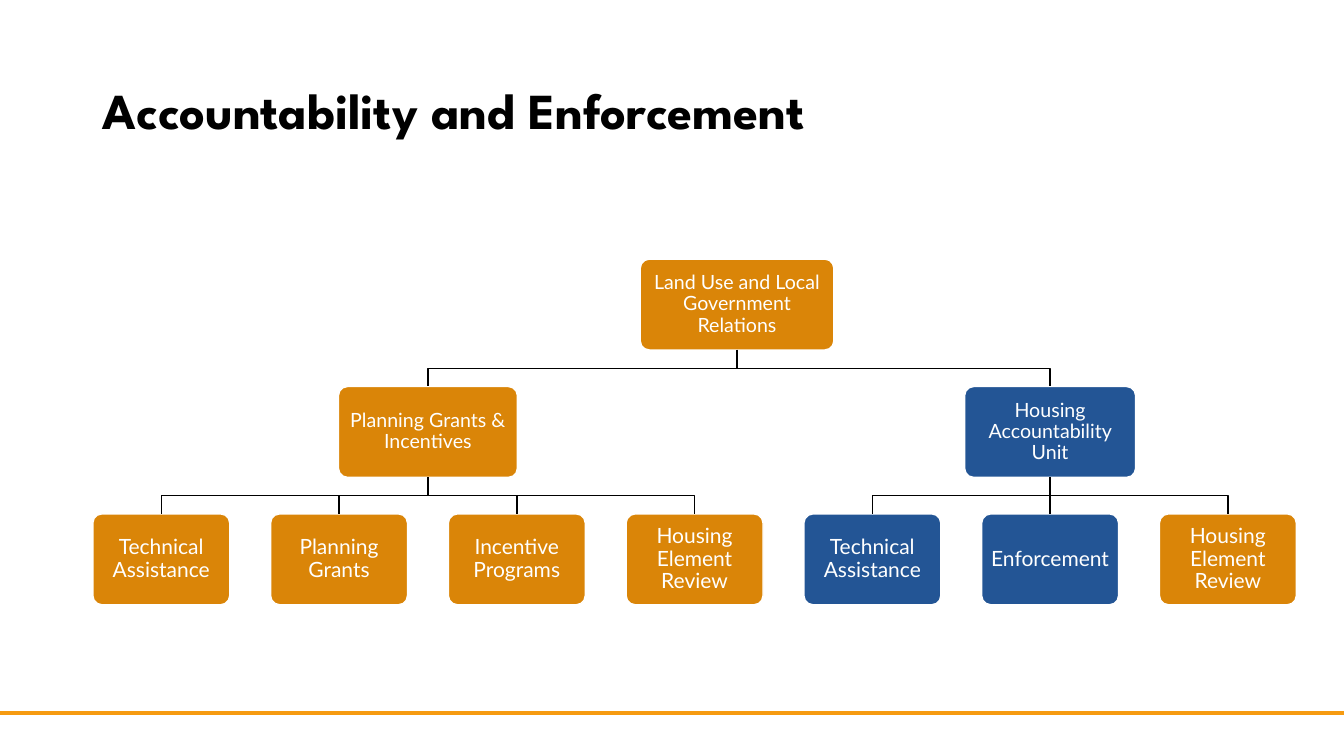
from dataclasses import dataclass

from pptx import Presentation
from pptx.dml.color import RGBColor
from pptx.enum.shapes import MSO_CONNECTOR, MSO_SHAPE
from pptx.enum.text import MSO_ANCHOR, PP_ALIGN
from pptx.oxml.ns import qn
from pptx.util import Cm, Pt


@dataclass(frozen=True)
class Theme:
    orange: RGBColor = RGBColor(0xDA, 0x85, 0x08)
    blue: RGBColor = RGBColor(0x23, 0x55, 0x95)
    rule: RGBColor = RGBColor(0xF6, 0x9B, 0x11)
    black: RGBColor = RGBColor(0, 0, 0)
    white: RGBColor = RGBColor(0xFF, 0xFF, 0xFF)
    head: str = "League Spartan"
    body: str = "Lato"
    title: Pt = Pt(36)
    unit: Pt = Pt(14)
    leaf: Pt = Pt(15)
    thin: Pt = Pt(1)
    thick: Pt = Pt(3)


THEME = Theme()

# Grid of the chart
WIDTH, HEIGHT = Cm(33.87), Cm(19.05)
TOP, STEP = Cm(6.53), Cm(3.21)
TALL = Cm(2.29)
FIRST, PITCH = Cm(2.34), Cm(4.48)
LEAF = Cm(3.45)

# Each unit: text, width, colour, leaves
UNITS = [
    ("Planning Grants & Incentives", Cm(4.51), THEME.orange, [
        ("Technical Assistance", THEME.orange),
        ("Planning Grants", THEME.orange),
        ("Incentive Programs", THEME.orange),
        ("Housing Element Review", THEME.orange),
    ]),
    ("Housing Accountability Unit", Cm(4.31), THEME.blue, [
        ("Technical Assistance", THEME.blue),
        ("Enforcement", THEME.blue),
        ("Housing Element Review", THEME.orange),
    ]),
]


def set_text(frame, text, font, size, color, bold=False):
    frame.word_wrap = True
    frame.vertical_anchor = MSO_ANCHOR.MIDDLE
    para = frame.paragraphs[0]
    para.text = text
    para.line_spacing = 0.9
    para.font.name = font
    para.font.size = size
    para.font.bold = bold
    para.font.color.rgb = color
    return para


def add_title(slide, text):
    box = slide.shapes.add_textbox(Cm(2.34), Cm(1.02), Cm(29.21), Cm(3.68))
    set_text(box.text_frame, text, THEME.head, THEME.title, THEME.black, True)


def add_box(slide, text, left, level, width, color, size):
    box = slide.shapes.add_shape(
        MSO_SHAPE.ROUNDED_RECTANGLE, left, TOP + level * STEP, width, TALL)
    box.adjustments[0] = 0.1
    box.shadow.inherit = False
    box.fill.solid()
    box.fill.fore_color.rgb = color
    box.line.color.rgb = THEME.white
    box.line.width = THEME.thin
    frame = box.text_frame
    frame.margin_left = frame.margin_right = Cm(0.15)
    frame.margin_top = frame.margin_bottom = Cm(0.15)
    para = set_text(frame, text, THEME.body, size, THEME.white)
    para.alignment = PP_ALIGN.CENTER
    return box


def add_line(slide, x1, y1, x2, y2, color, width):
    line = slide.shapes.add_connector(MSO_CONNECTOR.STRAIGHT, x1, y1, x2, y2)
    line.line.color.rgb = color
    line.line.width = width
    props = line._element.spPr
    props.append(props.makeelement(qn("a:effectLst"), {}))
    return line


def middle(box):
    return box.left + box.width // 2


def add_link(slide, upper, lower):
    """Join two boxes: straight if in line, else with two bends."""
    x1, y1 = middle(upper), upper.top + upper.height
    x2, y2 = middle(lower), lower.top
    if abs(x1 - x2) < Cm(0.05):
        line = add_line(slide, x1, y1, x2, y2, THEME.black, THEME.thin)
        line.begin_connect(upper, 2)
        line.end_connect(lower, 0)
        return
    bend = (y1 + y2) // 2
    path = slide.shapes.build_freeform(x1, y1)
    path.add_line_segments([(x1, bend), (x2, bend), (x2, y2)], close=False)
    link = path.convert_to_shape()
    link.fill.background()
    link.line.color.rgb = THEME.black
    link.line.width = THEME.thin
    link.shadow.inherit = False


def add_head(slide, text, level, width, color, kids):
    """Place a box centred over its kids and link it to them."""
    center = (kids[0].left + kids[-1].left + kids[-1].width) // 2
    box = add_box(slide, text, center - width // 2, level, width, color,
                  THEME.unit)
    for kid in kids:
        add_link(slide, box, kid)
    return box


def add_chart(slide):
    heads, slot = [], 0
    for text, width, color, leaves in UNITS:
        kids = [
            add_box(slide, name, FIRST + (slot + i) * PITCH, 2, LEAF, shade,
                    THEME.leaf)
            for i, (name, shade) in enumerate(leaves)
        ]
        slot += len(kids)
        heads.append(add_head(slide, text, 1, width, color, kids))
    add_head(slide, "Land Use and Local Government Relations", 0, Cm(4.88),
             THEME.orange, heads)


def main():
    deck = Presentation()
    deck.slide_width, deck.slide_height = WIDTH, HEIGHT
    slide = deck.slides.add_slide(deck.slide_layouts[6])

    # Rule at the foot
    add_line(slide, 0, Cm(17.96), WIDTH, Cm(17.96), THEME.rule, THEME.thick)

    # Title and chart
    add_title(slide, "Accountability and Enforcement")
    add_chart(slide)

    deck.save("out.pptx")


if __name__ == "__main__":
    main()
